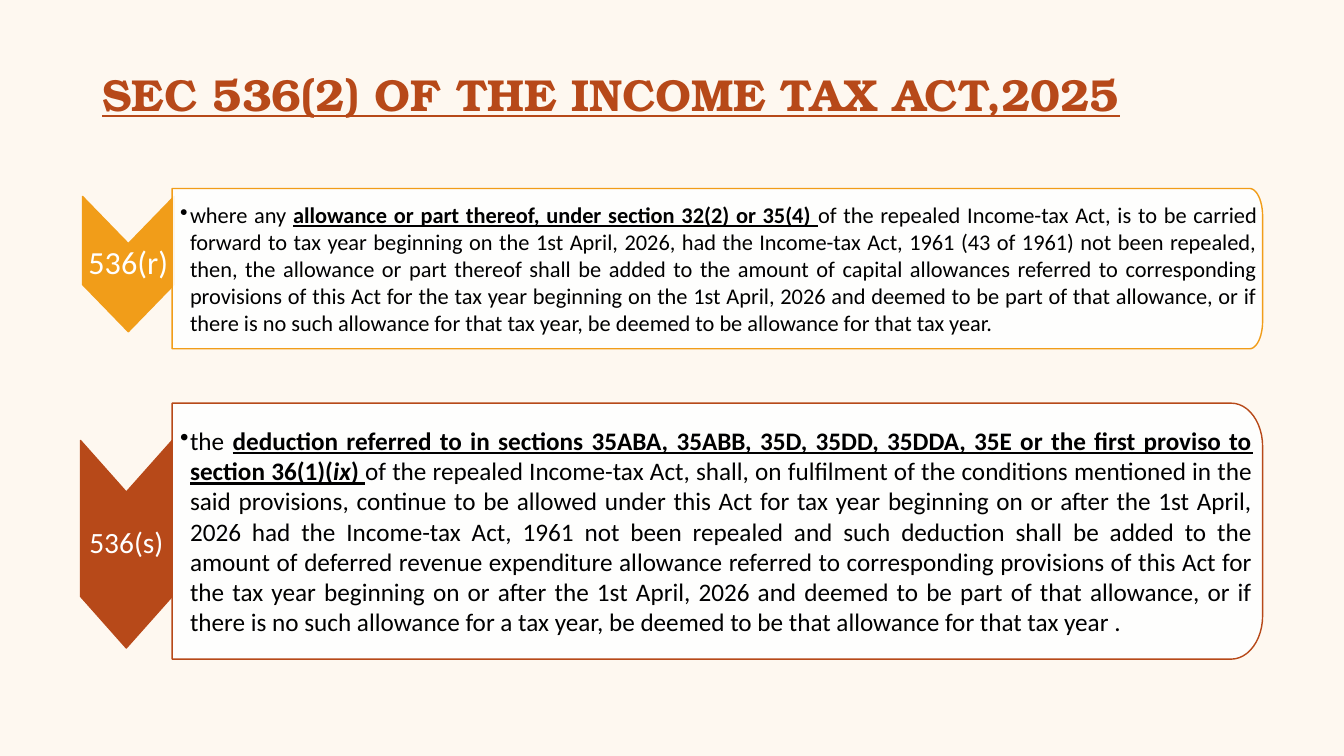
from math import cos, pi, sin

from lxml import etree
from pptx import Presentation
from pptx import util as u
from pptx.dml.color import RGBColor
from pptx.enum import text
from pptx.oxml.ns import qn

Cm = u.Cm
deck = Presentation()
deck.slide_width, deck.slide_height = Cm(33.87), Cm(19.05)
slide = deck.slides.add_slide(deck.slide_layouts[6])
back = slide.background.fill
back.solid()
back.fore_color.rgb = RGBColor.from_string("FEF8F0")


def write(shape, runs, size, color, font="Calibri", align="LEFT", pads=(0.25, 0.13, 0.25, 0.13),
          wrap=True, lead=1.0, bullet=False):
    frame = shape.text_frame
    frame.word_wrap = wrap
    frame.vertical_anchor = text.MSO_ANCHOR.MIDDLE
    frame.margin_left, frame.margin_top, frame.margin_right, frame.margin_bottom = map(Cm, pads)
    para = frame.paragraphs[0]
    para.alignment = text.PP_ALIGN[align]
    para.line_spacing = lead
    if bullet:
        props = para._p.get_or_add_pPr()
        props.set("marL", str(Cm(0.25)))
        props.set("indent", str(-Cm(0.25)))
        etree.SubElement(props, qn("a:buChar"), char="•")
    for words, style in runs:
        run = para.add_run()
        run.text = words
        face = run.font
        face.name, face.size = font, u.Pt(size)
        face.color.rgb = RGBColor.from_string(color)
        face.bold, face.underline, face.italic = "b" in style, "u" in style, "i" in style


def outline(points, fill, edge, alpha=100):
    dots = [(Cm(x), Cm(y)) for x, y in points]
    pen = slide.shapes.build_freeform(*dots[0])
    pen.add_line_segments(dots[1:], close=True)
    shape = pen.convert_to_shape()
    shape.shadow.inherit = False
    shape.fill.solid()
    shape.fill.fore_color.rgb = RGBColor.from_string(fill)
    if alpha < 100:
        tint = shape.fill._xPr.find(qn("a:solidFill"))[0]
        etree.SubElement(tint, qn("a:alpha"), val=str(alpha * 1000))
    shape.line.color.rgb = RGBColor.from_string(edge)
    shape.line.width = u.Pt(1)
    return shape


title = slide.shapes.add_textbox(Cm(2.33), Cm(0.61), Cm(29.21), Cm(3.68))
write(title, [("SEC 536(2) OF THE INCOME TAX ACT,2025", "bu")], 32, "B74919",
      font="TeX Gyre Bonum", lead=0.9)

clause_s = [
    ("the ", ""),
    ("deduction referred to in sections 35ABA, 35ABB, 35D, 35DD, 35DDA, 35E or the first proviso "
     "to section 36(1)(", "bu"),
    ("ix", "bui"),
    (") ", "bu"),
    ("of the repealed Income-tax Act, shall, on fulfilment of the conditions mentioned in the said "
     "provisions, continue to be allowed under this Act for tax year beginning on or after the 1st "
     "April, 2026 had the Income-tax Act, 1961 not been repealed and such deduction shall be added "
     "to the amount of deferred revenue expenditure allowance referred to corresponding provisions "
     "of this Act for the tax year beginning on or after the 1st April, 2026 and deemed to be part "
     "of that allowance, or if there is no such allowance for a tax year, be deemed to be that "
     "allowance for that tax year .", ""),
]
clause_r = [
    ("where any ", ""),
    ("allowance or part thereof, under section 32(2) or 35(4) ", "bu"),
    ("of the repealed Income-tax Act, is to be carried forward to tax year beginning on the 1st "
     "April, 2026, had the Income-tax Act, 1961 (43 of 1961) not been repealed, then, the allowance "
     "or part thereof shall be added to the amount of capital allowances referred to corresponding "
     "provisions of this Act for the tax year beginning on the 1st April, 2026 and deemed to be "
     "part of that allowance, or if there is no such allowance for that tax year, be deemed to be "
     "allowance for that tax year.", ""),
]
rows = [
    ("536(s)", 21, "B74919", (2.03, 11.1, 5.23, 1.3), (10.16, 6.45, 0.79, 1.09),
     clause_s, 18, (0.2, 0.25, 0.25, 0.25)),
    ("536(r)", 23, "F19D19", (2.08, 4.95, 3.41, 1.19), (4.75, 4.04, 0.33, 0.69),
     clause_r, 16, (0.2, 0.13, 0.13, 0.13)),
]
wide, left, right = 2.31, 4.34, 31.82
for label, big, color, (x, y, high, notch), (top, tall, rx, ry), clause, size, pads in rows:
    mid, end, low = x + wide / 2, x + wide, y + high
    arrow = outline([(end, y), (end, low - notch), (mid, low), (x, low - notch), (x, y),
                     (mid, y + notch)], color, color)
    write(arrow, [(label, "")], big, "FFFFFF", align="CENTER", pads=(0.05, 0, 0.05, 0),
          wrap=False, lead=0.9)

    turns = [step * pi / 24 for step in range(13)]
    upper = [(right - rx + rx * sin(t), top + ry - ry * cos(t)) for t in turns]
    lower = [(px, 2 * top + tall - py) for px, py in reversed(upper)]
    panel = outline([(left, top), *upper, *lower, (left, top + tall)], "FFFFFF", color, alpha=90)
    write(panel, clause, size, "000000", align="JUSTIFY", pads=pads, bullet=True)

deck.save("out.pptx")
